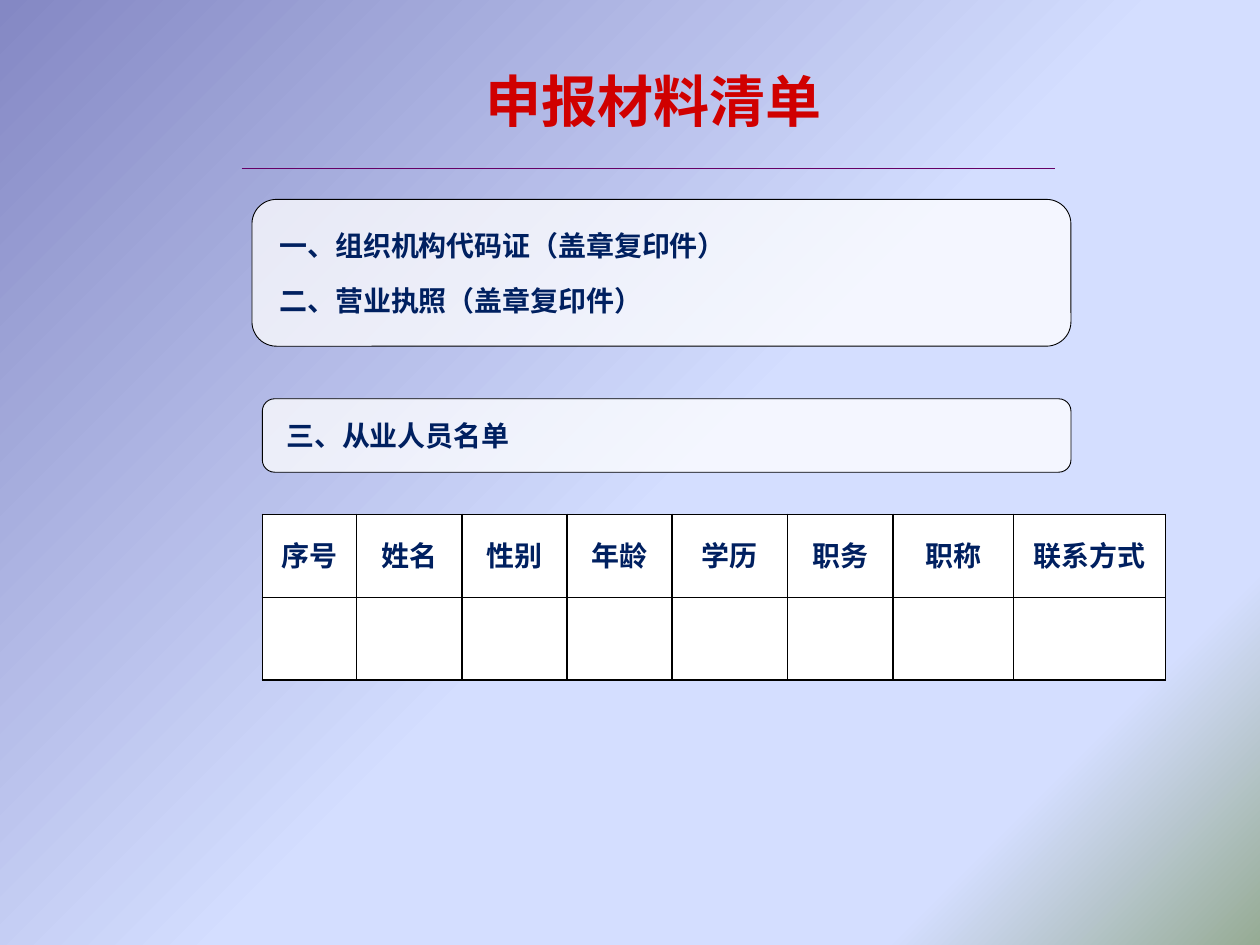
import lxml.etree
import pptx
import pptx.dml.color
import pptx.enum.shapes
import pptx.enum.text
import pptx.oxml
import pptx.oxml.ns
import pptx.util

Cm, Pt = pptx.util.Cm, pptx.util.Pt
ALIGN, ANCHOR = pptx.enum.text.PP_ALIGN, pptx.enum.text.MSO_ANCHOR
qn = pptx.oxml.ns.qn

COLORS = {
    "title": "D00000", "text": "002060", "rule": "660066",
    "border": "000000", "panel": "FFFFFF",
}
BACKDROP = [(0, "8488C4"), (53, "D4DEFF"), (83, "D4DEFF"), (100, "96AB94")]
HEADINGS = ["序号", "姓名", "性别", "年龄", "学历", "职务", "职称", "联系方式"]
COLUMN_WIDTHS = [1.9, 2.12, 2.12, 2.12, 2.33, 2.12, 2.43, 3.07]


def rgb(name):
    return pptx.dml.color.RGBColor.from_string(COLORS[name])


def add_span(para, text, size=16, font="Arial", color="text"):
    span = para.add_run()
    span.text = text
    span.font.size = Pt(size)
    span.font.name = font
    span.font.bold = True
    span.font.color.rgb = rgb(color)


def paint_background(page):
    fill = page.background.fill
    fill.gradient()
    fill.gradient_angle = 315  # counter-clockwise: top left to bottom right
    stops = page.background._cSld.find(".//" + qn("a:gsLst"))
    for stop in list(stops):
        stops.remove(stop)
    for percent, color in BACKDROP:
        stop = lxml.etree.SubElement(stops, qn("a:gs"), pos=str(percent * 1000))
        lxml.etree.SubElement(stop, qn("a:srgbClr"), val=color)


def place_title(page, left, top, width, height):
    title = page.shapes.title
    title.left, title.top = Cm(left), Cm(top)
    title.width, title.height = Cm(width), Cm(height)
    title.text_frame.vertical_anchor = ANCHOR.MIDDLE
    para = title.text_frame.paragraphs[0]
    para.alignment = ALIGN.LEFT
    add_span(para, "申报材料清单", 32, "Calibri", "title")


def add_rule(page, left, top, width):
    rule = page.shapes.add_connector(
        pptx.enum.shapes.MSO_CONNECTOR.STRAIGHT,
        Cm(left), Cm(top), Cm(left + width), Cm(top))
    rule.line.color.rgb = rgb("rule")
    rule.line.width = Pt(0.75)
    lxml.etree.SubElement(rule._element.spPr, qn("a:effectLst"))


def add_panel(page, left, top, width, height, items):
    """Translucent rounded panel with one paragraph for each item."""
    panel = page.shapes.add_shape(
        pptx.enum.shapes.MSO_SHAPE.FLOWCHART_ALTERNATE_PROCESS,
        Cm(left), Cm(top), Cm(width), Cm(height))
    panel.shadow.inherit = False
    panel.fill.solid()
    panel.fill.fore_color.rgb = rgb("panel")
    color = panel._element.spPr.find(qn("a:solidFill"))[0]
    lxml.etree.SubElement(color, qn("a:alpha"), val="75000")
    panel.line.color.rgb = rgb("border")
    panel.line.width = Pt(0.5)
    box = panel.text_frame
    box.word_wrap = True
    box.vertical_anchor = ANCHOR.MIDDLE
    box.margin_left = Cm(0.41)
    for index, item in enumerate(items):
        para = box.add_paragraph() if index else box.paragraphs[0]
        para.alignment = ALIGN.LEFT
        para.space_before = Pt(12 if index else 0)
        add_span(para, item)


def format_cell(cell):
    properties = cell._tc.get_or_add_tcPr()
    for side in "LRTB":
        properties.append(pptx.oxml.parse_xml(
            f'<a:ln{side} {pptx.oxml.ns.nsdecls("a")} w="12700"><a:solidFill>'
            f'<a:srgbClr val="{COLORS["border"]}"/></a:solidFill></a:ln{side}>'))
    cell.fill.solid()
    cell.fill.fore_color.rgb = rgb("panel")
    cell.vertical_anchor = ANCHOR.MIDDLE
    cell.margin_left = cell.margin_right = cell.margin_top = Cm(0.03)
    cell.margin_bottom = 0


def add_staff_table(page, left, top, width, height):
    table = page.shapes.add_table(
        2, len(HEADINGS), Cm(left), Cm(top), Cm(width), Cm(height)).table
    table.first_row = table.horz_banding = False
    for column, share in zip(table.columns, COLUMN_WIDTHS):
        column.width = Cm(width * share / sum(COLUMN_WIDTHS))
    for cell in table.iter_cells():
        format_cell(cell)
    for index, heading in enumerate(HEADINGS):
        para = table.cell(0, index).text_frame.paragraphs[0]
        para.alignment = ALIGN.CENTER
        para.line_spacing = 0.8
        add_span(para, heading)


def main():
    deck = pptx.Presentation()
    deck.slide_width, deck.slide_height = Cm(25.4), Cm(19.05)
    page = deck.slides.add_slide(deck.slide_layouts.get_by_name("Title Only"))
    paint_background(page)
    add_rule(page, 4.87, 3.39, 16.4)
    place_title(page, 9.53, 0.64, 10.8, 2.75)
    add_panel(page, 5.08, 4.02, 16.51, 2.96,
              ["一、组织机构代码证（盖章复印件）", "二、营业执照（盖章复印件）"])
    add_staff_table(page, 5.29, 10.37, 18.21, 3.34)
    add_panel(page, 5.29, 8.04, 16.3, 1.48, ["三、从业人员名单"])
    deck.save("out.pptx")


if __name__ == "__main__":
    main()
